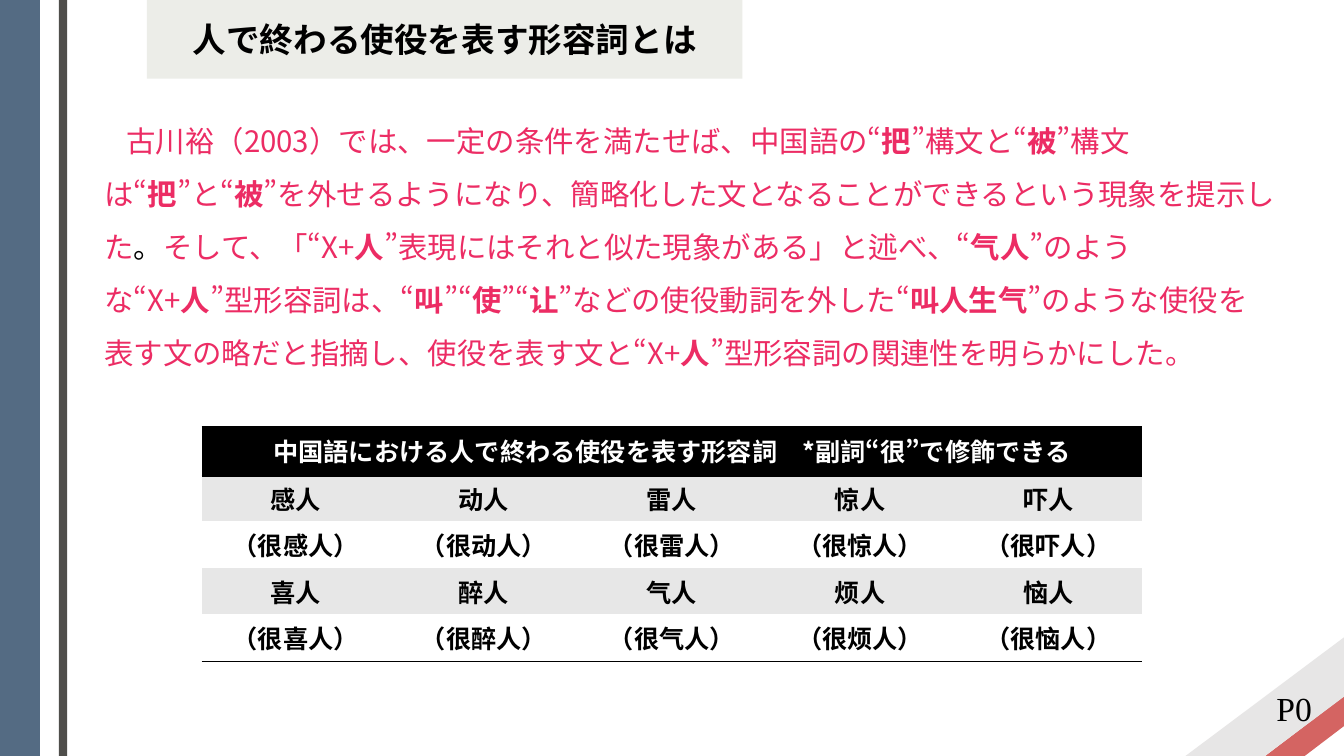
from itertools import groupby
from pptx import Presentation
from pptx.dml.color import RGBColor
from pptx.enum.shapes import MSO_SHAPE as Shape
from pptx.enum.text import MSO_ANCHOR as Anchor, PP_ALIGN as Align
from pptx.oxml.ns import qn
from pptx.util import Pt
from lxml.etree import SubElement

PX = 9525
THEME = {
    "black": "000000", "white": "FFFFFF", "pink": "EC2C64", "title_band": "ECEDE8",
    "slate": "546B83", "charcoal": "4F4E4B", "red": "D46462", "grey": "E7E6E6",
    "row_grey": "E7E7E7",
    "jp": "Noto Sans CJK JP", "sc": "Noto Sans CJK SC", "serif": "Times New Roman",
    "heading": 24, "body": 21, "table": 18, "rule": 1.5,
}
NO_STYLE = "{2D5ABB26-0587-4C30-8999-92F81FD0307C}"

deck = Presentation()
deck.slide_width, deck.slide_height = 1280 * PX, 720 * PX
page = deck.slides.add_slide(deck.slide_layouts[6])


def add_block(kind, place, fill, rotation=0):
    block = page.shapes.add_shape(kind, *[n * PX for n in place])
    block.shadow.inherit = False
    block.fill.solid()
    block.fill.fore_color.rgb = RGBColor.from_string(THEME[fill])
    block.line.fill.background()
    block.rotation = rotation


def add_spans(para, text, size, font, colour, bold=False):
    for narrow, letters in groupby(text, key=lambda letter: letter in "“”"):
        span = para.add_run()
        span.text = "".join(letters)
        span.font.size = Pt(THEME[size])
        span.font.bold = bold
        span.font.color.rgb = RGBColor.from_string(THEME[colour])
        span.font.name = THEME[font]
        SubElement(span.font._element, qn("a:ea")).set("typeface", THEME[font])
        if narrow:
            span.font._element.set("lang", "ko-KR")


add_block(Shape.DIAGONAL_STRIPE, (1205, 663, 75, 57), "red", 180)
add_block(Shape.DIAGONAL_STRIPE, (1129, 607, 151, 113), "grey", 180)
title_place = (140, 0, 567, 75)
add_block(Shape.RECTANGLE, title_place, "title_band")

labels = [
    ((1199, 645, 67, 59), "P0", "serif", False, False),
    (title_place, "人で終わる使役を表す形容詞とは", "jp", True, True),
]
for place, text, font, bold, wrap in labels:
    box = page.shapes.add_textbox(*[n * PX for n in place])
    box.text_frame.word_wrap = wrap
    box.text_frame.vertical_anchor = Anchor.MIDDLE
    para = box.text_frame.paragraphs[0]
    para.alignment = Align.CENTER
    add_spans(para, text, "heading", font, "black", bold)

passages = [
    ("古川裕（2003）では、一定の条件を満たせば、中国語の“|把|”構文と“|被|”構文は“|把|”と“|被|”"
     "を外せるようになり、簡略化した文となることができるという現象を提示した", "pink"),
    ("。", "black"),
    ("そして、「“X+|人|”表現にはそれと似た現象がある」と述べ、“|气人|”のような“X+|人|”型形容詞は、"
     "“|叫|”“|使|”“|让|”などの使役動詞を外した“|叫人生气|”のような使役を表す文の略だと指摘し、"
     "使役を表す文と“X+|人|”型形容詞の関連性を明らかにした。", "pink"),
]
body = page.shapes.add_textbox(90 * PX, 96 * PX, 1134 * PX, 567 * PX)
body.text_frame.word_wrap = True
para = body.text_frame.paragraphs[0]
para.line_spacing = 1.5
para._p.get_or_add_pPr().set("indent", str(21 * PX))
for passage, colour in passages:
    for index, text in enumerate(passage.split("|")):
        chinese = index % 2 == 1
        add_spans(para, text, "body", "sc" if chinese else "jp", colour, chinese)

add_block(Shape.RECTANGLE, (56, 0, 8, 720), "charcoal")
add_block(Shape.RECTANGLE, (0, 0, 38, 720), "slate")

header = [
    ("中国語における人で終わる使役を表す形容詞　*副詞", "jp"),
    ("“很”", "sc"),
    ("で修飾できる", "jp"),
]
adjectives = [
    ["感人", "动人", "雷人", "惊人", "吓人"],
    ["喜人", "醉人", "气人", "烦人", "恼人"],
]
rows = [[header] + [[]] * 4]
for words in adjectives:
    rows.append([[(word, "sc")] for word in words])
    rows.append([[(f"（很{word}）", "sc")] for word in words])

table = page.shapes.add_table(5, 5, 192 * PX, 407 * PX, 896 * PX, 223 * PX).table
table.first_row = table.horz_banding = False
table._tbl.tblPr.find(qn("a:tableStyleId")).text = NO_STYLE
table.cell(0, 0).merge(table.cell(0, 4))
fills = ["black", "row_grey", "white", "row_grey", "white"]
heights = [46, 43, 45, 44, 45]
borders = {0: ["a:lnT", "a:lnB"], 4: ["a:lnB"]}
for r, row in enumerate(rows):
    table.rows[r].height = heights[r] * PX
    for c, spans in enumerate(row):
        cell = table.cell(r, c)
        for side in borders.get(r, []):
            line = SubElement(cell._tc.get_or_add_tcPr(), qn(side), w=str(Pt(THEME["rule"])))
            paint = SubElement(line, qn("a:solidFill"))
            SubElement(paint, qn("a:srgbClr"), val=THEME["black"])
        cell.fill.solid()
        cell.fill.fore_color.rgb = RGBColor.from_string(THEME[fills[r]])
        para = cell.text_frame.paragraphs[0]
        para.alignment = Align.CENTER
        for text, font in spans:
            add_spans(para, text, "table", font, "white" if r == 0 else "black", True)

deck.save("out.pptx")
